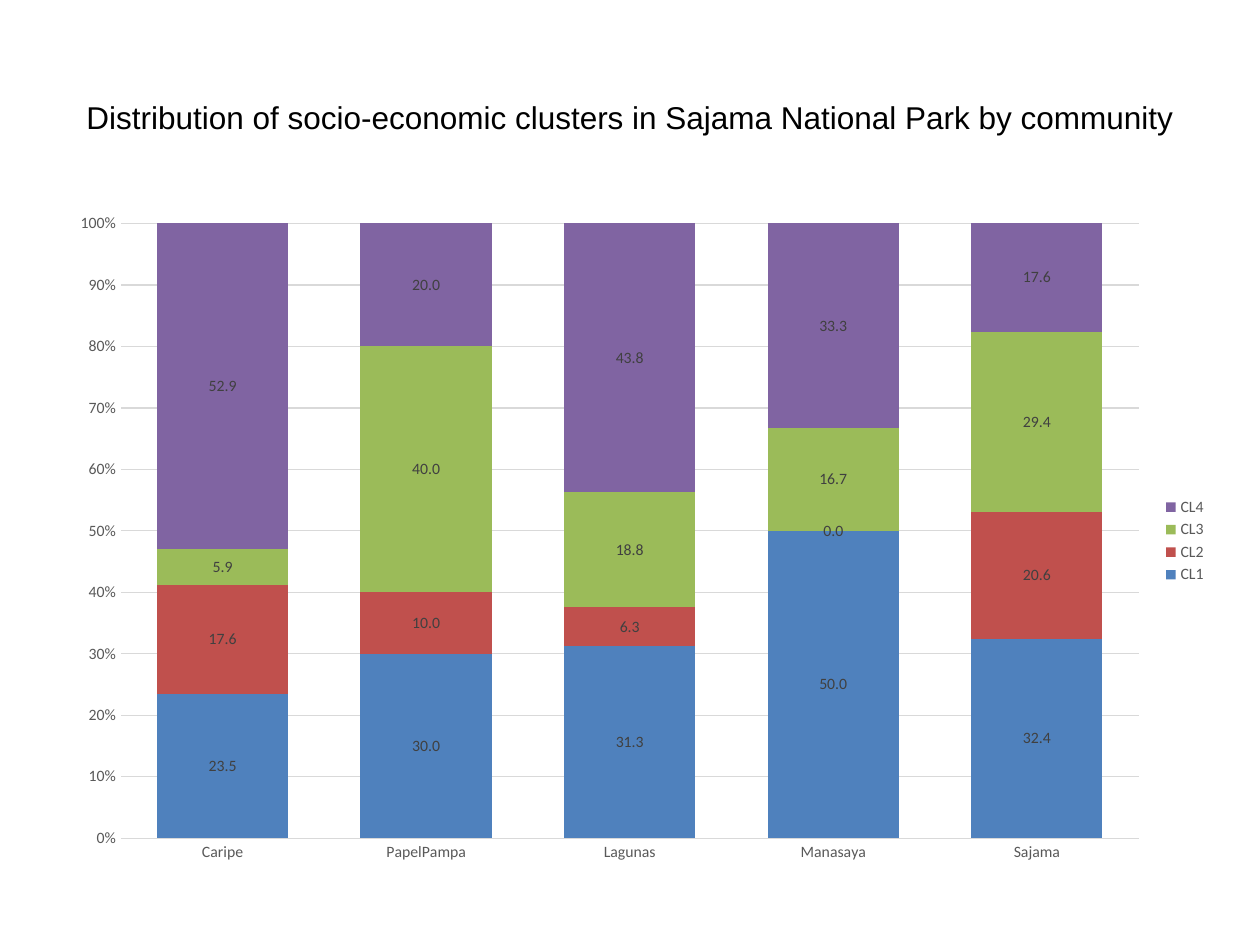
from pptx import Presentation
from pptx import util as u
from pptx.chart.data import CategoryChartData
from pptx.dml.color import RGBColor
from pptx.enum import chart as ch, text as tx
from pptx.oxml import parse_xml
from pptx.oxml.ns import nsdecls, qn

WIDE, HIGH = u.Inches(10), u.Inches(7.5)
TOWNS = ["Caripe", "PapelPampa", "Lagunas", "Manasaya", "Sajama"]
GROUPS = [
    ("CL1", "4F81BD", [23.5, 30, 31.3, 50, 32.4]),
    ("CL2", "C0504D", [17.6, 10, 6.3, 0, 20.6]),
    ("CL3", "9BBB59", [5.9, 40, 18.8, 16.7, 29.4]),
    ("CL4", "8064A2", [52.9, 20, 43.8, 33.3, 17.6]),
]


def paint(item, color):
    item.fill.solid()
    item.fill.fore_color.rgb = RGBColor.from_string(color)


def rule(line, color):
    line.color.rgb = RGBColor.from_string(color)
    line.width = u.Pt(0.75)


def style(font, size, color, name="Calibri"):
    font.size, font.name, font.bold = u.Pt(size), name, False
    font.color.rgb = RGBColor.from_string(color)


def scale(box):
    x, y, w, h = box
    return int(x * WIDE), int(y * HIGH), int(w * WIDE), int(h * HIGH)


def pin(node, spot, box, inner=False):
    old = node.find(qn("c:layout"))
    if old is not None:
        node.remove(old)
    target = '<c:layoutTarget val="inner"/>' if inner else ""
    modes = "".join(f'<c:{k}Mode val="edge"/>' for k in "xy")
    sizes = "".join(f'<c:{k} val="{v}"/>' for k, v in zip("xywh", box))
    node.insert(spot, parse_xml(
        f'<c:layout {nsdecls("c")}><c:manualLayout>{target}{modes}{sizes}'
        "</c:manualLayout></c:layout>"))


def add_title(slide, box, words):
    title = slide.shapes.title
    title.left, title.top, title.width, title.height = scale(box)
    frame = title.text_frame
    frame.text = words
    frame.word_wrap = True
    frame.vertical_anchor = tx.MSO_ANCHOR.MIDDLE
    para = frame.paragraphs[0]
    para.alignment = tx.PP_ALIGN.CENTER
    style(para.runs[0].font, 18, "000000", "Arial")


def style_axes(chart):
    for axis in (chart.category_axis, chart.value_axis):
        axis.major_tick_mark = axis.minor_tick_mark = ch.XL_TICK_MARK.NONE
        style(axis.tick_labels.font, 9, "595959")
    rule(chart.category_axis.format.line, "D9D9D9")
    axis = chart.value_axis
    axis.format.line.fill.background()
    axis.has_major_gridlines = True
    rule(axis.major_gridlines.format.line, "D9D9D9")
    axis.tick_labels.number_format = "0%"
    axis.tick_labels.number_format_is_linked = False


def add_stack(slide, box):
    data = CategoryChartData(number_format="0.0")
    data.categories = TOWNS
    for name, _, vals in GROUPS:
        data.add_series(name, vals)
    chart = slide.shapes.add_chart(
        ch.XL_CHART_TYPE.COLUMN_STACKED_100, *scale(box), data).chart
    style(chart.font, 10, "000000")
    chart.has_title = False
    style_axes(chart)

    plot = chart.plots[0]
    plot.gap_width, plot.overlap, plot.vary_by_categories = 55, 100, False
    for series, (_, color, _) in zip(plot.series, GROUPS):
        paint(series.format, color)
        labels = series.data_labels
        labels.show_value = True
        labels.number_format = "0.0"
        labels.number_format_is_linked = False
        style(labels.font, 9, "404040")

    chart.has_legend = True
    legend = chart.legend
    legend.position = ch.XL_LEGEND_POSITION.RIGHT
    legend.include_in_layout = False
    style(legend.font, 9, "595959")
    area = chart.element.find(".//" + qn("c:plotArea"))
    pin(area, 0, (0.05, 0.03, 0.88, 0.91), inner=True)
    pin(area.getparent().find(qn("c:legend")), 1, (0.95, 0.43, 0.04, 0.14))


def main():
    deck = Presentation()
    deck.slide_width, deck.slide_height = WIDE, HIGH
    slide = deck.slides.add_slide(deck.slide_layouts[5])
    add_title(slide, (0.05, 0.04, 0.9, 1 / 6),
              "Distribution of socio-economic clusters in Sajama National Park by community")
    add_stack(slide, (0.05, 0.215, 0.918, 0.715))
    deck.save("out.pptx")


if __name__ == "__main__":
    main()
